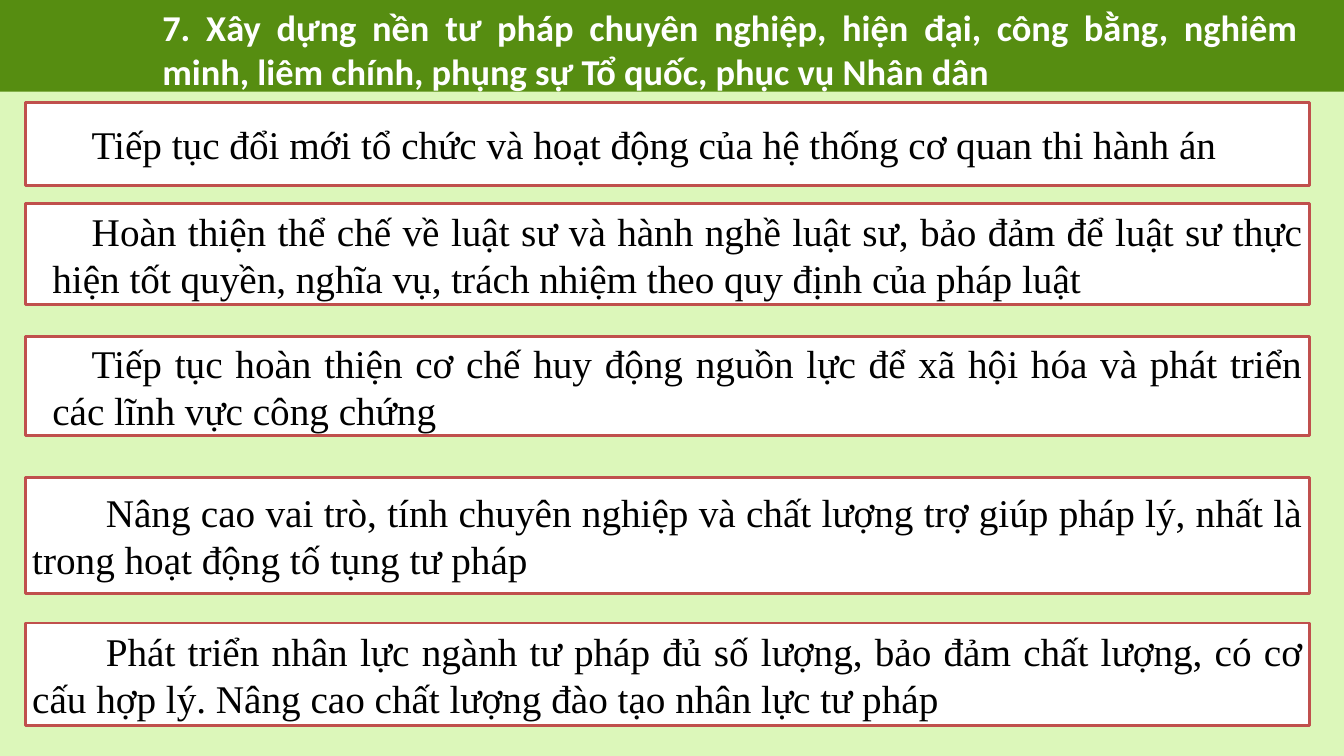
from dataclasses import dataclass

from pptx import Presentation
from pptx.dml.color import RGBColor
from pptx.enum.shapes import MSO_SHAPE
from pptx.enum.text import MSO_ANCHOR, MSO_AUTO_SIZE, PP_ALIGN
from pptx.util import Inches, Pt


@dataclass(frozen=True)
class Theme:
    page: str = "DCF7BA"
    band: str = "568D11"
    card: str = "FFFFFF"
    edge: str = "C0504D"
    ink: str = "000000"
    light: str = "FFFFFF"
    head_font: str = "Calibri"
    body_font: str = "Times New Roman"
    head_size: int = 26
    body_size: int = 28
    edge_width: int = 2


def write(shape, text, font, size, color, bold=False, anchor=MSO_ANCHOR.MIDDLE,
          inset=(0.07, 0.04), margin=0, indent=0):
    frame = shape.text_frame
    frame.word_wrap = True
    frame.auto_size = MSO_AUTO_SIZE.NONE
    frame.vertical_anchor = anchor
    frame.margin_left = frame.margin_right = Inches(inset[0])
    frame.margin_top = frame.margin_bottom = Inches(inset[1])
    para = frame.paragraphs[0]
    para.alignment = PP_ALIGN.JUSTIFY
    props = para._p.get_or_add_pPr()
    props.set("marL", str(Inches(margin)))
    props.set("indent", str(Inches(indent)))
    run = para.add_run()
    run.text = text
    run.font.name = font
    run.font.size = Pt(size)
    run.font.bold = bold
    run.font.color.rgb = RGBColor.from_string(color)


class Deck:
    def __init__(self, theme):
        self.theme = theme
        self.file = Presentation()
        self.file.slide_width = Inches(13.33)
        self.file.slide_height = Inches(7.5)
        self.slide = None

    def page(self):
        self.slide = self.file.slides.add_slide(self.file.slide_layouts[5])
        fill = self.slide.background.fill
        fill.solid()
        fill.fore_color.rgb = RGBColor.from_string(self.theme.page)

    def box(self, left, top, width, height, color, edge=None):
        shape = self.slide.shapes.add_shape(
            MSO_SHAPE.RECTANGLE, Inches(left), Inches(top), Inches(width), Inches(height))
        shape.shadow.inherit = False
        shape.fill.solid()
        shape.fill.fore_color.rgb = RGBColor.from_string(color)
        if edge:
            shape.line.color.rgb = RGBColor.from_string(edge)
            shape.line.width = Pt(self.theme.edge_width)
        else:
            shape.line.fill.background()
        return shape

    def title(self, text):
        theme = self.theme
        self.box(0, 0, 13.33, 0.91, theme.band)
        head = self.slide.shapes.title
        head.left, head.top = Inches(1.46), Inches(0)
        head.width, head.height = Inches(11.53), Inches(0.98)
        self.slide.shapes._spTree.append(head._element)
        write(head, text, theme.head_font, theme.head_size, theme.light, bold=True,
              anchor=MSO_ANCHOR.TOP, inset=(0.1, 0.05), margin=0.05)

    def card(self, text, top, height, margin, indent):
        theme = self.theme
        shape = self.box(0.25, top, 12.74, height, theme.card, theme.edge)
        write(shape, text, theme.body_font, theme.body_size, theme.ink,
              margin=margin, indent=indent)


CARDS = [
    ("Tiếp tục đổi mới tổ chức và hoạt động của hệ thống cơ quan thi hành án",
     1.02, 0.82, 0, 0.59),
    ("Hoàn thiện thể chế về luật sư và hành nghề luật sư, bảo đảm để luật sư thực "
     "hiện tốt quyền, nghĩa vụ, trách nhiệm theo quy định của pháp luật",
     2.02, 1, 0.2, 0.39),
    ("Tiếp tục hoàn thiện cơ chế huy động nguồn lực để xã hội hóa và phát triển "
     "các lĩnh vực công chứng",
     3.34, 0.98, 0.2, 0.39),
    ("Nâng cao vai trò, tính chuyên nghiệp và chất lượng trợ giúp pháp lý, nhất là "
     "trong hoạt động tố tụng tư pháp",
     4.74, 1.15, 0, 0.73),
    ("Phát triển nhân lực ngành tư pháp đủ số lượng, bảo đảm chất lượng, có cơ "
     "cấu hợp lý. Nâng cao chất lượng đào tạo nhân lực tư pháp",
     6.18, 1.02, 0, 0.73),
]


def main():
    deck = Deck(Theme())
    deck.page()
    deck.title("7. Xây dựng nền tư pháp chuyên nghiệp, hiện đại, công bằng, nghiêm "
               "minh, liêm chính, phụng sự Tổ quốc, phục vụ Nhân dân")
    for card in CARDS:
        deck.card(*card)
    deck.file.save("out.pptx")


if __name__ == "__main__":
    main()
